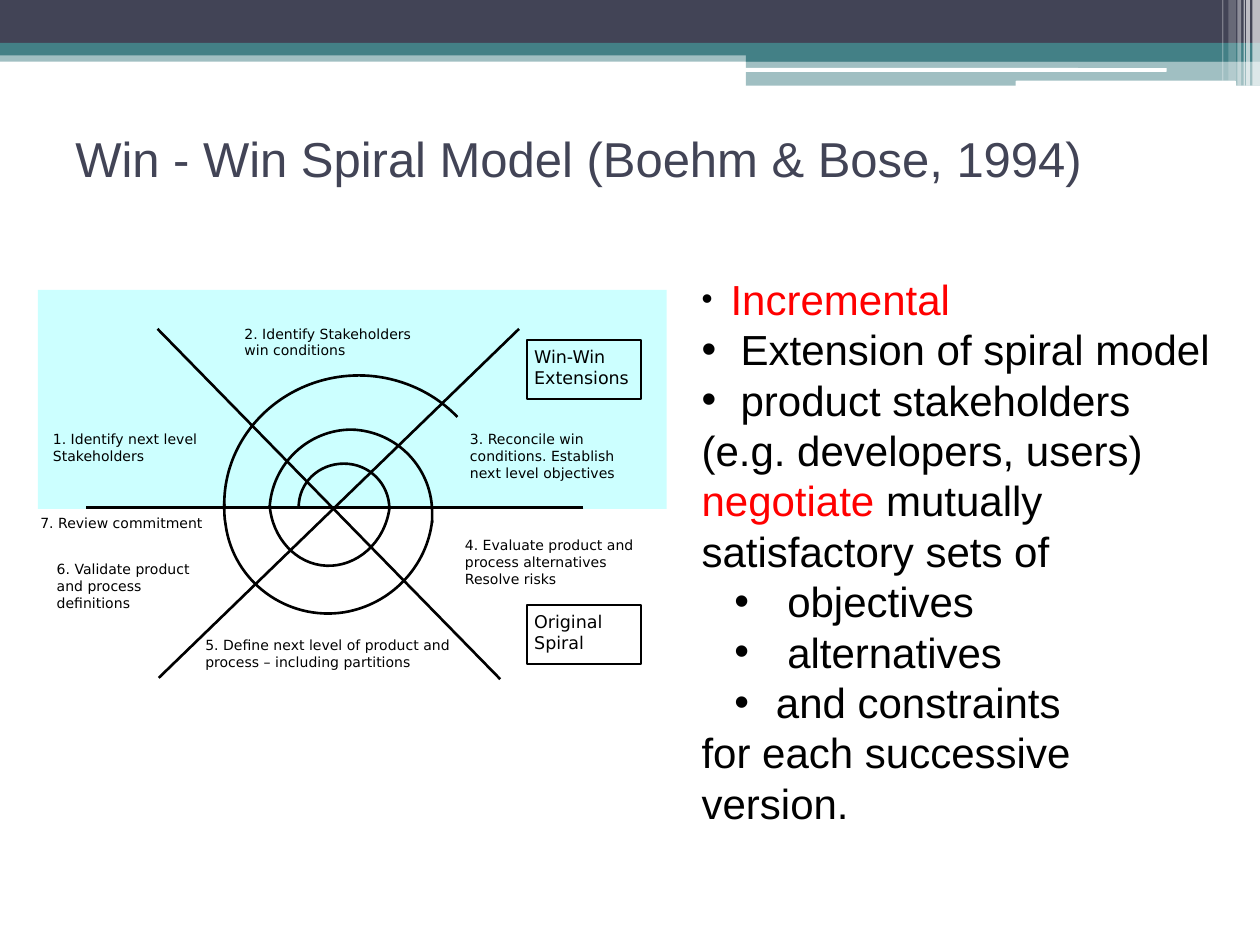
from dataclasses import dataclass

from lxml.etree import SubElement
from pptx import Presentation
from pptx.dml.color import RGBColor
from pptx.enum.shapes import MSO_CONNECTOR as CONN, MSO_SHAPE as SHAPE
from pptx.enum.text import MSO_ANCHOR as ANCHOR, PP_ALIGN as ALIGN
from pptx.oxml.ns import qn
from pptx.util import Inches, Pt

COLORS = {"navy": "424456", "teal": "438086", "white": "FFFFFF",
          "cyan": "CCFFFF", "black": "000000", "red": "FF0000"}
BODY_FONT, LABEL_FONT = "Arial", "DejaVu Sans"

Box = tuple[float, float, float, float]
Point = tuple[float, float]


@dataclass
class Bar:
    box: Box
    color: str
    alpha: int = 100
    kind: SHAPE = SHAPE.RECTANGLE


@dataclass
class Label:
    box: Box
    lines: tuple[str, ...]


@dataclass
class Item:
    runs: tuple[tuple[str, str], ...]
    bullet_at: float | None = None
    text_at: float = 0
    bullet_size: int = 100
    tab: float | None = None


BARS = [
    Bar((0, 0.4, 10, 0.09), "teal", 50),
    Bar((0, 0, 10, 0.34), "navy"),
    Bar((0, 0.34, 10, 0.1), "teal"),
    Bar((5.92, 0.39, 4.08, 0.1), "teal"),
    Bar((5.92, 0.48, 4.08, 0.2), "teal", 50),
    Bar((5.91, 0.54, 3.35, 0.03), "white", kind=SHAPE.ROUNDED_RECTANGLE),
    Bar((8.06, 0.64, 1.75, 0.05), "white", kind=SHAPE.ROUNDED_RECTANGLE),
    Bar((9.94, 0, 0.06, 0.68), "white", 65),
    Bar((9.89, 0, 0.03, 0.68), "white", 65),
    Bar((9.87, 0, 0.01, 0.68), "white", 60),
    Bar((9.82, 0, 0.03, 0.68), "white", 40),
    Bar((9.75, 0, 0.06, 0.64), "white", 20),
    Bar((9.7, 0, 0.01, 0.64), "white", 30),
]
EXTENSION_AREA = Bar((0.3, 2.3, 4.99, 1.74), "cyan")
AXES = [((3.97, 5.39), (1.25, 2.61)), ((1.26, 5.38), (4.12, 2.61)),
        ((4.63, 4.03), (0.68, 4.03))]
# Each arc is a start point followed by three Bezier points per segment.
ARCS = [
    [(2.37, 4.03), (2.37, 3.83), (2.53, 3.68), (2.73, 3.68),
     (2.93, 3.68), (3.09, 3.84), (3.09, 4.04)],
    [(2.14, 4.01), (2.16, 4.27), (2.35, 4.48), (2.59, 4.49),
     (2.83, 4.5), (3.05, 4.31), (3.09, 4.04)],
    [(3.43, 4.15), (3.43, 4.13), (3.43, 4.11), (3.43, 4.09),
     (3.44, 3.72), (3.15, 3.42), (2.79, 3.41),
     (2.45, 3.41), (2.16, 3.68), (2.14, 4.03)],
    [(3.43, 4.13), (3.39, 4.5), (3.1, 4.8), (2.73, 4.86),
     (2.28, 4.93), (1.85, 4.62), (1.79, 4.16),
     (1.78, 4.11), (1.78, 4.06), (1.78, 4)],
    [(3.63, 3.31), (3.43, 3.1), (3.14, 2.98), (2.85, 2.98),
     (2.26, 2.98), (1.78, 3.44), (1.78, 4),
     (1.78, 4.01), (1.78, 4.01), (1.78, 4.02)],
]
STEPS = [
    Label((0.4, 3.41, 1.34, 0.33), ("1. Identify next level Stakeholders",)),
    Label((0.3, 4.07, 1.41, 0.23), ("7. Review commitment",)),
    Label((0.43, 4.44, 1.15, 0.47), ("6. Validate product and process definitions",)),
    Label((1.61, 5.04, 2, 0.46),
          ("5. Define next level of product and process – including partitions",)),
    Label((3.67, 4.25, 1.67, 0.49),
          ("4. Evaluate product and process alternatives", "Resolve risks")),
    Label((3.71, 3.41, 1.39, 0.42),
          ("3. Reconcile win conditions. Establish next level objectives",)),
    Label((1.92, 2.57, 1.54, 0.32), ("2. Identify Stakeholders win conditions",)),
]
LEGENDS = [Label((4.18, 2.7, 0.91, 0.47), ("Win-Win Extensions",)),
           Label((4.18, 4.8, 0.91, 0.47), ("Original Spiral",))]
ITEMS = [
    Item((("Incremental", "red"),), 0, 0.23, 75),
    Item((("Extension of spiral model", "black"),), 0, 0.31),
    Item((("\tproduct stakeholders (e.g. developers, users)", "black"),), 0, tab=0.31),
    Item((("negotiate", "red"), (" mutually satisfactory sets of", "black"))),
    Item((("objectives", "black"),), 0.26, 0.68),
    Item((("alternatives", "black"),), 0.26, 0.68),
    Item((("and constraints", "black"),), 0.26, 0.59),
    Item((("for each successive version.", "black"),)),
]


def rgb(name: str) -> RGBColor:
    return RGBColor.from_string(COLORS[name])


def inches(values) -> list:
    return [Inches(v) for v in values]


def add_bar(slide, bar: Bar) -> None:
    sp = slide.shapes.add_shape(bar.kind, *inches(bar.box))
    sp.shadow.inherit = False
    sp.fill.solid()
    sp.fill.fore_color.rgb = rgb(bar.color)
    sp.line.fill.background()
    if bar.alpha < 100:
        color = sp.fill._xPr.find(".//" + qn("a:srgbClr"))
        SubElement(color, qn("a:alpha"), val=str(bar.alpha * 1000))


def set_line(sp, width: float) -> None:
    sp.line.color.rgb = rgb("black")
    sp.line.width = Pt(width)


def add_axis(slide, start: Point, end: Point) -> None:
    axis = slide.shapes.add_connector(CONN.STRAIGHT, *inches(start + end))
    set_line(axis, 1.5)
    SubElement(axis._element.spPr, qn("a:effectLst"))


def add_arc(slide, arc: list[Point]) -> None:
    """Draw an open outline and turn each three of its segments into a curve."""
    start, *rest = [inches(point) for point in arc]
    builder = slide.shapes.build_freeform(*start)
    builder.add_line_segments(rest, close=False)
    sp = builder.convert_to_shape()
    sp.shadow.inherit = False
    sp.fill.background()
    set_line(sp, 1.5)
    outline = sp._element.find(".//" + qn("a:path"))
    segments = outline.findall(qn("a:lnTo"))
    for i in range(0, len(segments), 3):
        curve = SubElement(outline, qn("a:cubicBezTo"))
        for segment in segments[i:i + 3]:
            curve.append(segment[0])
            outline.remove(segment)


def setup_text(sp, inset_x: float, inset_y: float, anchor=ANCHOR.TOP):
    tf = sp.text_frame
    tf.word_wrap = True
    tf.vertical_anchor = anchor
    tf.margin_left = tf.margin_right = Inches(inset_x)
    tf.margin_top = tf.margin_bottom = Inches(inset_y)
    return tf


def add_run(p, text: str, font: str, size: float, color: str) -> None:
    r = p.add_run()
    r.text = text
    r.font.name, r.font.size = font, Pt(size)
    r.font.color.rgb = rgb(color)


def add_label(slide, label: Label, size: float, framed: bool = False) -> None:
    if framed:
        sp = slide.shapes.add_shape(SHAPE.RECTANGLE, *inches(label.box))
        sp.shadow.inherit = False
        sp.fill.background()
        set_line(sp, 1)
    else:
        sp = slide.shapes.add_textbox(*inches(label.box))
    tf = setup_text(sp, *((0.06, 0.05) if framed else (0.02, 0.01)))
    for i, line in enumerate(label.lines):
        p = tf.add_paragraph() if i else tf.paragraphs[0]
        p.alignment = ALIGN.LEFT
        add_run(p, line, LABEL_FONT, size, "black")


def format_item(p, item: Item) -> None:
    """Set the bullet, hanging indent and tab stop of a list paragraph."""
    pPr = p._p.get_or_add_pPr()
    if item.bullet_at is not None:
        pPr.set("marL", str(Inches(item.text_at)))
        pPr.set("indent", str(Inches(item.bullet_at - item.text_at)))
        color = SubElement(pPr, qn("a:buClr"))
        SubElement(color, qn("a:srgbClr"), val=COLORS["black"])
        SubElement(pPr, qn("a:buSzPct"), val=str(item.bullet_size * 1000))
        SubElement(pPr, qn("a:buFont"), typeface=BODY_FONT)
        SubElement(pPr, qn("a:buChar"), char="•")
    if item.tab is not None:
        tabs = SubElement(pPr, qn("a:tabLst"))
        SubElement(tabs, qn("a:tab"), pos=str(Inches(item.tab)), algn="l")


def add_list(slide, box: Box, items: list[Item]) -> None:
    tf = setup_text(slide.shapes.add_textbox(*inches(box)), 0.1, 0.05)
    for i, item in enumerate(items):
        p = tf.add_paragraph() if i else tf.paragraphs[0]
        p.line_spacing = Pt(28.8)
        format_item(p, item)
        for text, color in item.runs:
            add_run(p, text, BODY_FONT, 24, color)


def main() -> None:
    prs = Presentation()
    prs.slide_width, prs.slide_height = Inches(10), Inches(7.5)
    slide = prs.slides.add_slide(prs.slide_layouts[6])
    for bar in BARS:
        add_bar(slide, bar)
    title = slide.shapes.add_textbox(*inches((0.5, 0.67, 9, 1.17)))
    tf = setup_text(title, 0.1, 0.05, ANCHOR.MIDDLE)
    add_run(tf.paragraphs[0], "Win - Win Spiral Model (Boehm & Bose, 1994)", BODY_FONT, 28, "navy")
    add_bar(slide, EXTENSION_AREA)
    for start, end in AXES:
        add_axis(slide, start, end)
    for arc in ARCS:
        add_arc(slide, arc)
    for step in STEPS:
        add_label(slide, step, 8)
    for legend in LEGENDS:
        add_label(slide, legend, 10, framed=True)
    add_list(slide, (5.47, 2.12, 4.33, 4.54), ITEMS)
    prs.save("out.pptx")


if __name__ == "__main__":
    main()
